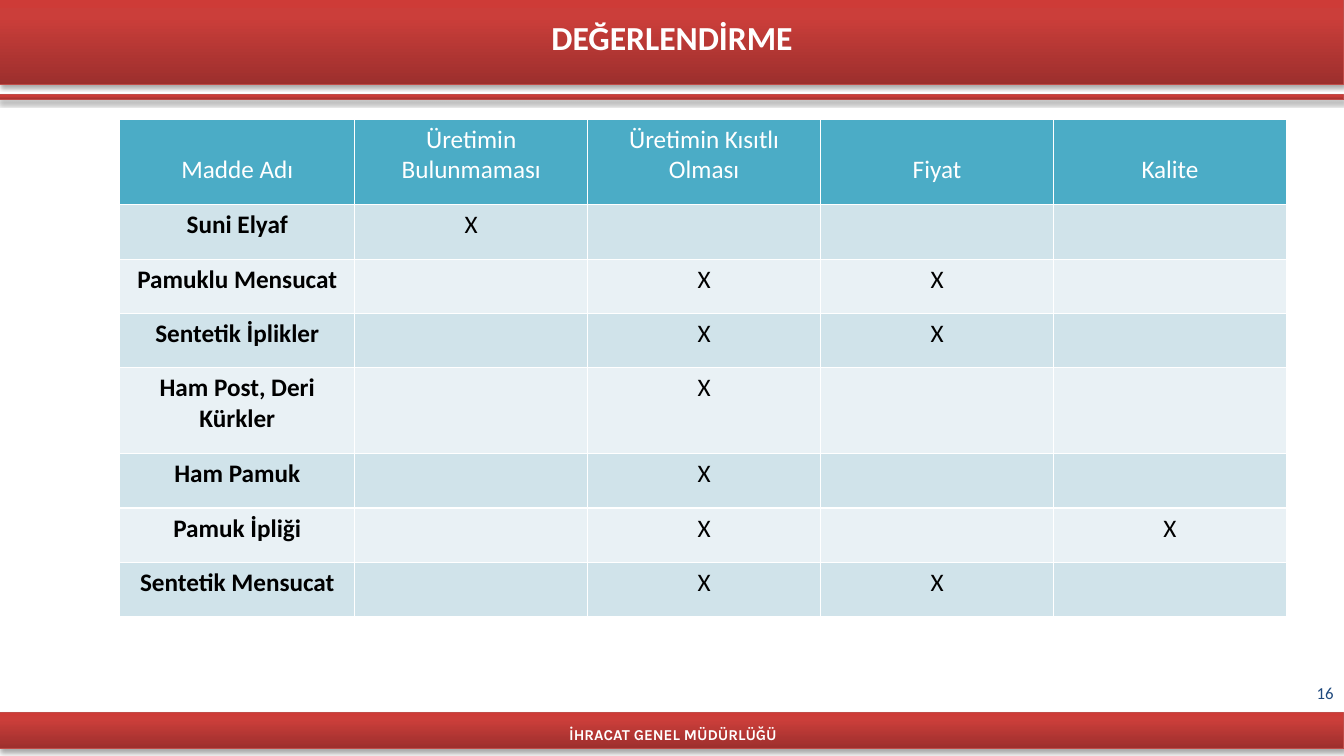
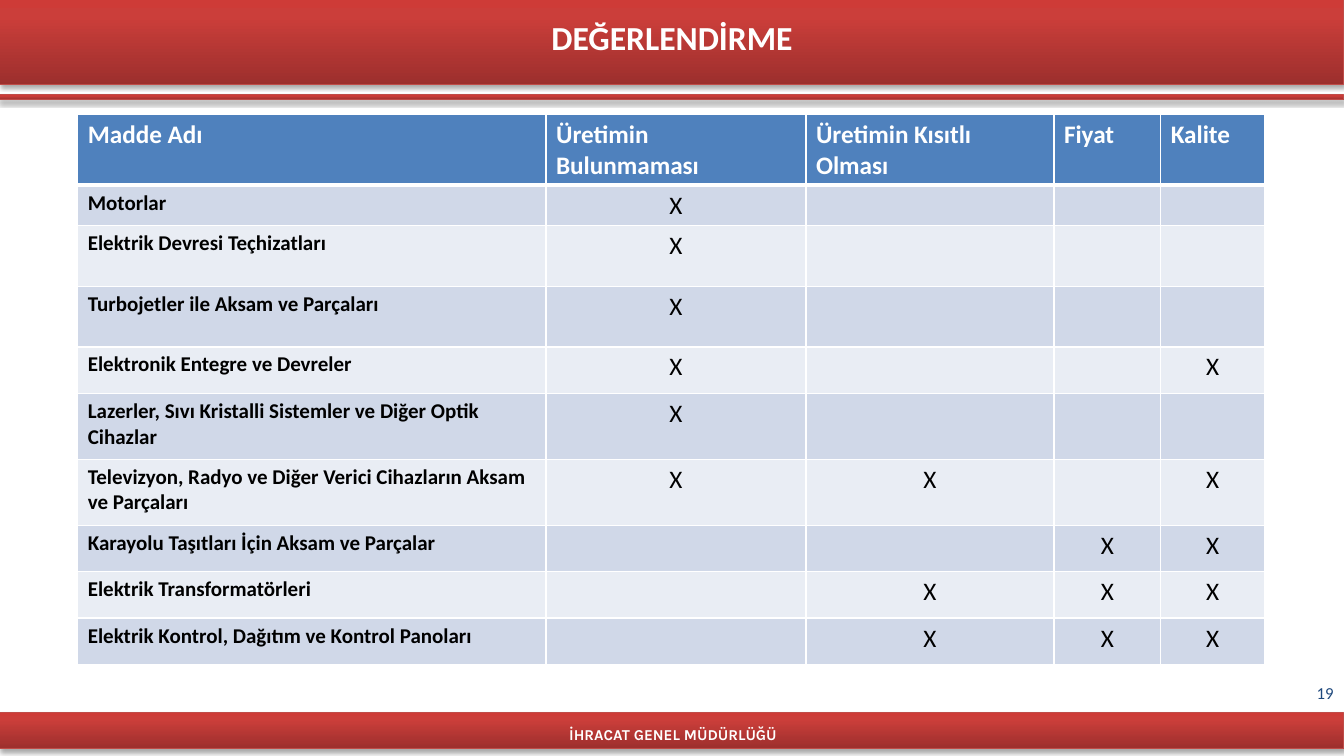
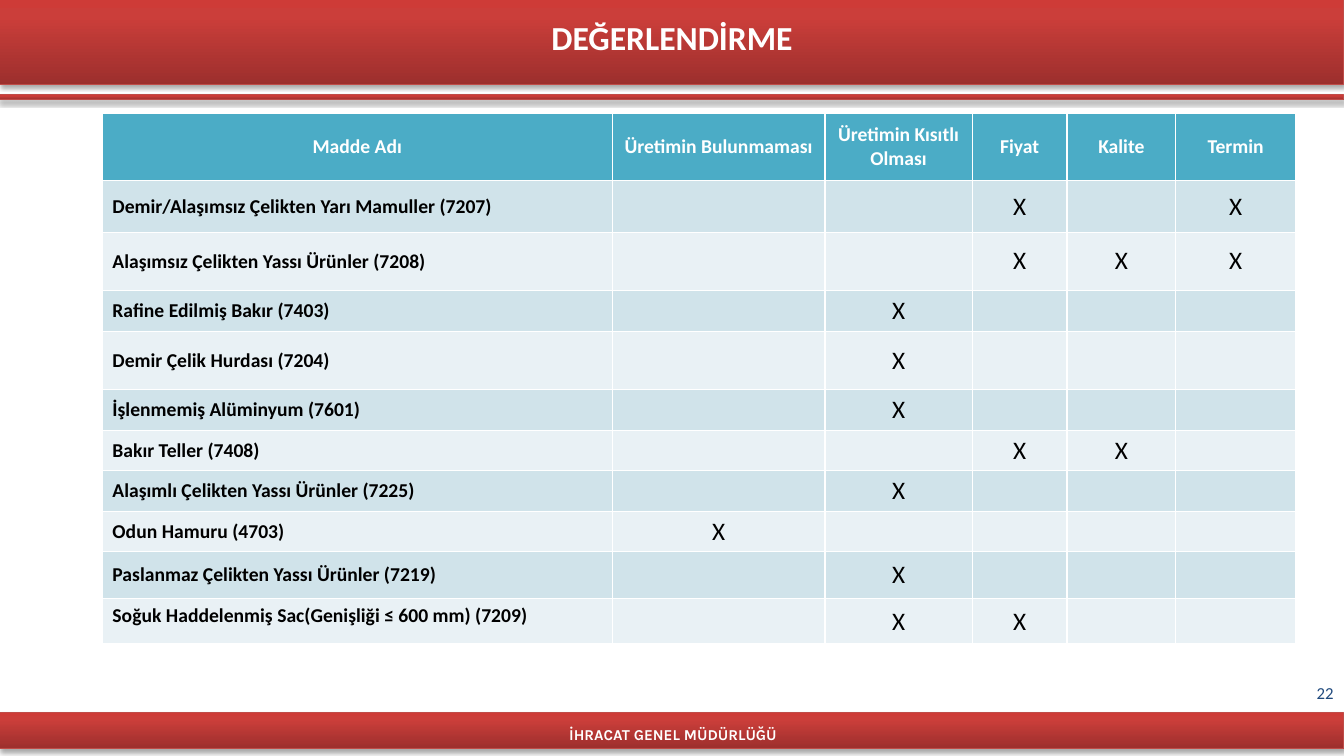
"""Builds three evaluation slides, each with one marked table."""
from pptx import Presentation
from pptx.dml.color import RGBColor
from pptx.enum.shapes import MSO_SHAPE
from pptx.enum.text import MSO_ANCHOR as ANCHOR, PP_ALIGN as ALIGN
from pptx.oxml import parse_xml
from pptx.oxml.ns import nsdecls
from pptx.util import Cm, Pt

WIDTH, HEIGHT = 33.87, 19.05
FONT, FOOTER_FONT = "Calibri", "Karla"
WHITE, BLACK, NAVY, BAND_LINE = "FFFFFF", "000000", "1F497D", "BF4C48"
BAND_STOPS = [(0, "9C2F2D"), (80, "CB3E3A"), (100, "CE3B37")]
BANDS = [(0, 2.13), (2.39, 0.13), (17.96, 0.91)]
TEAL = ("4BACC6", "D0E3EA", "E9F1F5")
BLUE = ("4F81BD", "D0D8E8", "E9EDF4")
TITLE = "DEĞERLENDİRME"
FOOTER = "İHRACAT GENEL MÜDÜRLÜĞÜ"
MARK_SIZE = 18

SLIDES = [
    {
        "number": 16, "at": (3.02, 3), "colors": TEAL, "header_rule": 1,
        "cols": [5.92] + [5.87] * 4,
        "rows": [2.16, 1.37, 1.37, 1.37, 2.16, 1.37, 1.37, 1.37],
        "head": {"size": 18, "bold": False, "align": ALIGN.CENTER,
                 "anchor": ANCHOR.BOTTOM, "bottom": 0.5},
        "label": {"size": 18, "align": ALIGN.CENTER},
        "anchor": ANCHOR.TOP,
        "header": ["Madde Adı", "Üretimin Bulunmaması", "Üretimin Kısıtlı Olması",
                   "Fiyat", "Kalite"],
        "items": [
            ("Suni Elyaf", "X---"),
            ("Pamuklu Mensucat", "-XX-"),
            ("Sentetik İplikler", "-XX-"),
            ("Ham Post, Deri Kürkler", "-X--"),
            ("Ham Pamuk", "-X--"),
            ("Pamuk İpliği", "-X-X"),
            ("Sentetik Mensucat", "-XX-"),
        ],
    },
    {
        "number": 19, "at": (1.96, 2.88), "colors": BLUE, "header_rule": 3,
        "cols": [11.8, 6.55, 6.25, 2.69, 2.62],
        "rows": [1.77, 1.02, 1.53, 1.53, 1.17, 1.66, 1.66, 1.17, 1.17, 1.17],
        "head": {"size": 18, "bold": True, "align": ALIGN.LEFT},
        "label": {"size": 15, "align": ALIGN.LEFT},
        "anchor": ANCHOR.TOP,
        "header": ["Madde Adı", "Üretimin Bulunmaması", "Üretimin Kısıtlı Olması",
                   "Fiyat", "Kalite"],
        "items": [
            ("Motorlar", "X---"),
            ("Elektrik Devresi Teçhizatları", "X---"),
            ("Turbojetler ile Aksam ve Parçaları", "X---"),
            ("Elektronik Entegre ve Devreler", "X--X"),
            ("Lazerler, Sıvı Kristalli Sistemler ve Diğer Optik Cihazlar", "X---"),
            ("Televizyon, Radyo ve Diğer Verici Cihazların Aksam ve Parçaları", "XX-X"),
            ("Karayolu Taşıtları İçin Aksam ve Parçalar", "--XX"),
            ("Elektrik Transformatörleri", "-XXX"),
            ("Elektrik Kontrol, Dağıtım ve Kontrol Panoları", "-XXX"),
        ],
    },
    {
        "number": 22, "at": (2.58, 2.87), "colors": TEAL, "header_rule": 1,
        "cols": [12.85, 5.36, 3.71, 2.39, 2.74, 3.02],
        "rows": [1.68, 1.3, 1.47, 1.03, 1.47, 1.02, 1.02, 1.02, 1.02, 1.19, 1.14],
        "head": {"size": 14, "bold": True, "align": ALIGN.CENTER},
        "label": {"size": 14, "align": ALIGN.LEFT},
        "anchor": ANCHOR.MIDDLE, "last_label_anchor": ANCHOR.TOP,
        "header": ["Madde Adı", "Üretimin Bulunmaması", "Üretimin Kısıtlı Olması",
                   "Fiyat", "Kalite", "Termin"],
        "items": [
            ("Demir/Alaşımsız Çelikten Yarı Mamuller (7207)", "--X-X"),
            ("Alaşımsız Çelikten Yassı Ürünler (7208)", "--XXX"),
            ("Rafine Edilmiş Bakır (7403)", "-X---"),
            ("Demir Çelik Hurdası (7204)", "-X---"),
            ("İşlenmemiş Alüminyum (7601)", "-X---"),
            ("Bakır Teller (7408)", "--XX-"),
            ("Alaşımlı Çelikten Yassı Ürünler (7225)", "-X---"),
            ("Odun Hamuru (4703)", "X----"),
            ("Paslanmaz Çelikten Yassı Ürünler (7219)", "-X---"),
            ("Soğuk Haddelenmiş Sac(Genişliği ≤ 600 mm) (7209)", "-XX--"),
        ],
    },
]


def rgb(color):
    return RGBColor.from_string(color)


def write(tf, text, size, color, bold=False, align=ALIGN.CENTER, font=FONT):
    tf.text = text
    p = tf.paragraphs[0]
    p.alignment = align
    for r in p.runs:
        r.font.name, r.font.size, r.font.bold = font, Pt(size), bold
        r.font.color.rgb = rgb(color)


def add_text(s, box, text, size, color, anchor=ANCHOR.MIDDLE, **style):
    sp = s.shapes.add_textbox(*map(Cm, box))
    sp.text_frame.word_wrap = True
    sp.text_frame.vertical_anchor = anchor
    write(sp.text_frame, text, size, color, **style)
    return sp


def add_band(s, top, height):
    sp = s.shapes.add_shape(MSO_SHAPE.RECTANGLE, 0, Cm(top), Cm(WIDTH), Cm(height))
    sp.line.color.rgb, sp.line.width = rgb(BAND_LINE), Pt(0.75)
    stops = "".join(f'<a:gs pos="{pos * 1000}"><a:srgbClr val="{color}"/></a:gs>'
                    for pos, color in BAND_STOPS)
    props = sp.element.spPr
    props.insert(2, parse_xml(
        f'<a:gradFill {nsdecls("a")} rotWithShape="1"><a:gsLst>{stops}</a:gsLst>'
        '<a:lin ang="16200000" scaled="0"/></a:gradFill>'))
    props.append(parse_xml(
        f'<a:effectLst {nsdecls("a")}><a:outerShdw blurRad="40000" dist="23000" '
        'dir="5400000" rotWithShape="0"><a:srgbClr val="000000">'
        '<a:alpha val="35000"/></a:srgbClr></a:outerShdw></a:effectLst>'))
    return sp


def move_frame_to_layout(s):
    frame = [add_band(s, *band) for band in BANDS]
    frame.append(add_text(s, (13.34, 18.16, 7.24, 0.71), FOOTER, 10.8, WHITE,
                          bold=True, font=FOOTER_FONT))
    for sp in frame:
        s.slide_layout.shapes.element.append(sp.element)


def set_borders(cell, top, bottom):
    tc_pr = cell._tc.get_or_add_tcPr()
    for i, (side, width) in enumerate([("L", 1), ("R", 1), ("T", top), ("B", bottom)]):
        tc_pr.insert(i, parse_xml(
            f'<a:ln{side} {nsdecls("a")} w="{Pt(width)}"><a:solidFill>'
            f'<a:srgbClr val="{WHITE}"/></a:solidFill></a:ln{side}>'))


def add_marks_table(s, data):
    cols, rows, head = data["cols"], data["rows"], data["head"]
    left, top = data["at"]
    table = s.shapes.add_table(len(rows), len(cols), Cm(left), Cm(top),
                               Cm(sum(cols)), Cm(sum(rows))).table
    for column, width in zip(table.columns, cols):
        column.width = Cm(width)
    for row, height in zip(table.rows, rows):
        row.height = Cm(height)

    header_fill, *bands = data["colors"]
    grid = [data["header"]] + [[label, *marks] for label, marks in data["items"]]
    for i, line in enumerate(grid):
        for j, text in enumerate(line):
            cell = table.cell(i, j)
            cell.fill.solid()
            cell.fill.fore_color.rgb = rgb(bands[(i - 1) % 2] if i else header_fill)
            cell.vertical_anchor = data["anchor"]
            set_borders(cell, data["header_rule"] if i == 1 else 1,
                        data["header_rule"] if i == 0 else 1)
            if i == 0:
                write(cell.text_frame, text, head["size"], WHITE, head["bold"], head["align"])
                cell.vertical_anchor = head.get("anchor", data["anchor"])
                cell.margin_bottom = Cm(head.get("bottom", 0.13))
            elif j == 0:
                write(cell.text_frame, text, color=BLACK, bold=True, **data["label"])
            elif text == "X":
                write(cell.text_frame, text, MARK_SIZE, BLACK)
    table.cell(len(rows) - 1, 0).vertical_anchor = data.get("last_label_anchor", data["anchor"])


def main():
    prs = Presentation()
    prs.slide_width, prs.slide_height = Cm(WIDTH), Cm(HEIGHT)
    blank = prs.slide_layouts[6]
    for i, data in enumerate(SLIDES):
        s = prs.slides.add_slide(blank)
        if i == 0:
            move_frame_to_layout(s)
        add_text(s, (25.96, 16.94, 7.9, 1.02), str(data["number"]), 12, NAVY,
                 align=ALIGN.RIGHT)
        add_text(s, (0, 0.3, WIDTH, 1.28), TITLE, 24, WHITE, ANCHOR.TOP, bold=True)
        add_marks_table(s, data)
    prs.save("out.pptx")


if __name__ == "__main__":
    main()
